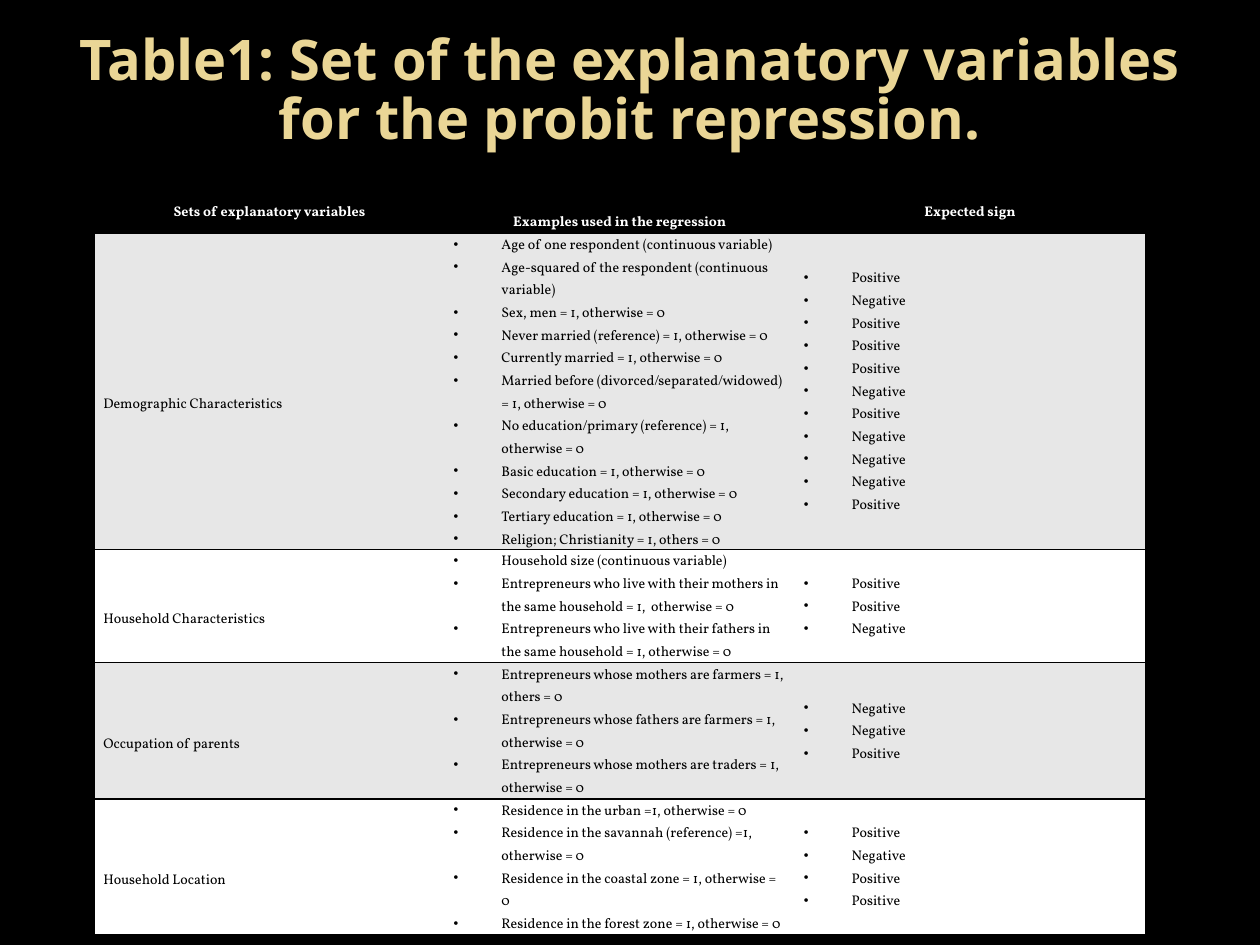
from lxml import etree
from pptx import Presentation
from pptx import util as u
from pptx.dml.color import RGBColor
from pptx.enum import text
from pptx.oxml import ns

BLACK, WHITE, GREY, GOLD = "000000", "FFFFFF", "E7E7E7", "EAD696"
HEADINGS = ["Sets of explanatory variables", "Examples used in the regression", "Expected sign"]
POS, NEG = "Positive", "Negative"
VARIABLE_SETS = [
    ("Demographic Characteristics", [
        ("Age of one respondent (continuous variable)", POS),
        ("Age-squared of the respondent (continuous variable)", NEG),
        ("Sex, men = 1, otherwise = 0", POS),
        ("Never married (reference) = 1, otherwise = 0", POS),
        ("Currently married = 1, otherwise = 0", POS),
        ("Married before (divorced/separated/widowed) = 1, otherwise = 0", NEG),
        ("No education/primary (reference) = 1, otherwise = 0", POS),
        ("Basic education = 1, otherwise = 0", NEG),
        ("Secondary education = 1, otherwise = 0", NEG),
        ("Tertiary education = 1, otherwise = 0", NEG),
        ("Religion; Christianity = 1, others = 0", POS),
    ]),
    ("Household Characteristics", [
        ("Household size (continuous variable)", POS),
        ("Entrepreneurs who live with their mothers in the same household = 1,  otherwise = 0", POS),
        ("Entrepreneurs who live with their fathers in the same household = 1, otherwise = 0", NEG),
    ]),
    ("Occupation of parents", [
        ("Entrepreneurs whose mothers are farmers = 1, others = 0", NEG),
        ("Entrepreneurs whose fathers are farmers = 1, otherwise = 0", NEG),
        ("Entrepreneurs whose mothers are traders = 1, otherwise = 0", POS),
    ]),
    ("Household Location", [
        ("Residence in the urban =1, otherwise = 0", POS),
        ("Residence in the savannah (reference) =1, otherwise = 0", NEG),
        ("Residence in the coastal zone = 1, otherwise = 0", POS),
        ("Residence in the forest zone = 1, otherwise = 0", POS),
    ]),
]
ROW_HEIGHTS = [0.34, 2.51, 0.9, 1.08, 1.08]
COLUMN_WIDTH = 2.78


def rgb(value):
    return RGBColor.from_string(value)


def add_run(paragraph, wording, font, size, color, bold=False):
    run = paragraph.add_run()
    run.text = wording
    run.font.name = font
    run.font.size = u.Pt(size)
    run.font.bold = bold
    run.font.color.rgb = rgb(color)


def add_title(slide, wording):
    frame = slide.shapes.add_textbox(
        u.Inches(0.5), u.Inches(0.3), u.Inches(9), u.Inches(0.87)).text_frame
    frame.word_wrap = True
    frame.vertical_anchor = text.MSO_ANCHOR.MIDDLE
    frame.margin_left = frame.margin_right = u.Inches(0.05)
    paragraph = frame.paragraphs[0]
    paragraph.alignment = text.PP_ALIGN.CENTER
    paragraph.line_spacing = 0.88
    add_run(paragraph, wording, "Noto Sans", 32, GOLD, bold=True)


def set_borders(cell, visible):
    """Draw the named sides (L, R, T, B) in black and clear the others."""
    properties = cell._tc.get_or_add_tcPr()
    for position, side in enumerate("LRTB"):
        line = etree.Element(ns.qn(f"a:ln{side}"), w=str(u.Pt(1)))
        if side in visible:
            fill = etree.SubElement(line, ns.qn("a:solidFill"))
            etree.SubElement(fill, ns.qn("a:srgbClr"), val=BLACK)
        else:
            etree.SubElement(line, ns.qn("a:noFill"))
        properties.insert(position, line)


def add_bullet(paragraph):
    properties = paragraph._p.get_or_add_pPr()
    properties.set("marL", str(u.Inches(0.38)))
    properties.set("indent", str(-u.Inches(0.38)))
    etree.SubElement(properties, ns.qn("a:buChar"), char="•")


def fill_cell(cell, lines, background, color=BLACK, heading=False, bullets=False, top=0):
    cell.fill.solid()
    cell.fill.fore_color.rgb = rgb(background)
    cell.vertical_anchor = text.MSO_ANCHOR.MIDDLE
    cell.margin_left = cell.margin_right = u.Inches(0.07)
    cell.margin_top, cell.margin_bottom = u.Inches(top), 0
    frame = cell.text_frame
    for index, wording in enumerate(lines):
        paragraph = frame.add_paragraph() if index else frame.paragraphs[0]
        paragraph.line_spacing = 1.15
        if heading:
            paragraph.alignment = text.PP_ALIGN.CENTER
        if bullets:
            add_bullet(paragraph)
        add_run(paragraph, wording, "Vollkorn", 8, color, bold=heading)


def add_variables_table(slide):
    table = slide.shapes.add_table(
        len(ROW_HEIGHTS), len(HEADINGS), u.Inches(0.75), u.Inches(1.51),
        u.Inches(COLUMN_WIDTH * len(HEADINGS)), u.Inches(sum(ROW_HEIGHTS))).table
    for column in table.columns:
        column.width = u.Inches(COLUMN_WIDTH)
    for row, height in zip(table.rows, ROW_HEIGHTS):
        row.height = u.Inches(height)

    for column, heading in enumerate(HEADINGS):
        fill_cell(table.cell(0, column), [heading], BLACK, WHITE, heading=True,
                  top=0.16 if column == 1 else 0)
    for row, (name, variables) in enumerate(VARIABLE_SETS, start=1):
        background = GREY if row % 2 else WHITE
        examples, signs = zip(*variables)
        fill_cell(table.cell(row, 0), [name], background, top=0.2)
        fill_cell(table.cell(row, 1), examples, background, bullets=True)
        fill_cell(table.cell(row, 2), signs, background, bullets=True)

    for row in table.rows:
        for cell, sides in zip(row.cells, ("LTB", "TB", "RTB")):
            set_borders(cell, sides)


def main():
    deck = Presentation()
    deck.slide_width, deck.slide_height = u.Inches(10), u.Inches(7.5)
    slide = deck.slides.add_slide(deck.slide_layouts[6])
    slide.background.fill.solid()
    slide.background.fill.fore_color.rgb = rgb(BLACK)
    add_title(slide, "Table1: Set of the explanatory variables for the probit repression.")
    add_variables_table(slide)
    deck.save("out.pptx")


if __name__ == "__main__":
    main()
